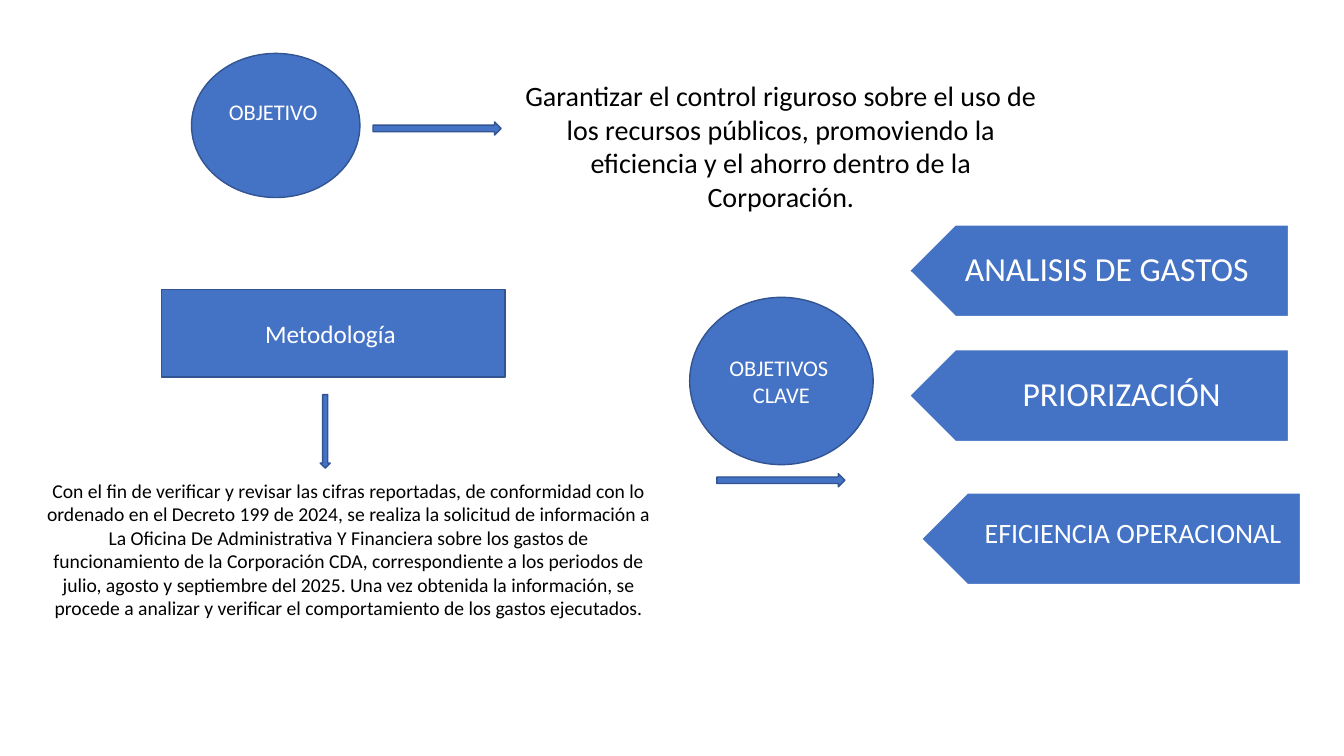
"""Build the slide on goals, method and key aims of spending control."""
import pptx
import pptx.dml.color
import pptx.enum.shapes
import pptx.enum.text
import pptx.util

Inches = pptx.util.Inches
Pt = pptx.util.Pt
Kind = pptx.enum.shapes.MSO_SHAPE
Anchor = pptx.enum.text.MSO_ANCHOR
Fit = pptx.enum.text.MSO_AUTO_SIZE
BLUE = pptx.dml.color.RGBColor(0x44, 0x72, 0xC4)
NAVY = pptx.dml.color.RGBColor(0x32, 0x54, 0x91)
WHITE = pptx.dml.color.RGBColor(0xFF, 0xFF, 0xFF)
BLACK = pptx.dml.color.RGBColor(0, 0, 0)

GOAL = "Garantizar el control riguroso sobre el uso de los recursos públicos, promoviendo la eficiencia y el ahorro dentro de la Corporación."
METHOD = (
    "Con el fin de verificar y revisar las cifras reportadas, de conformidad con lo ordenado en el "
    "Decreto 199 de 2024, se realiza la solicitud de información a La Oficina De Administrativa Y "
    "Financiera sobre los gastos de funcionamiento de la Corporación CDA, correspondiente a los "
    "periodos de julio, agosto y septiembre del 2025. Una vez obtenida la información, se procede "
    "a analizar y verificar el comportamiento de los gastos ejecutados."
)
NODES = [
    (Kind.OVAL, (1.9, 0.53, 1.67, 1.43), ["OBJETIVO "], 16, {"margin_bottom": Inches(0.32)}),
    (Kind.OVAL, (6.84, 2.95, 1.82, 1.66), ["OBJETIVOS ", "CLAVE"], 16, {}),
    (Kind.RECTANGLE, (1.6, 2.87, 3.41, 0.87), ["Metodología "], 18, {}),
]
ARROWS = [
    ((3.7, 1.21, 1.27, 0.13), 0),
    ((7.11, 4.7, 1.27, 0.13), 0),
    ((2.86, 4.23, 0.73, 0.1), 90),
]
NOTES = [
    ((5.01, 0.73, 5.47, 1.45), GOAL, 20),
    ((0.34, 4.7, 6.24, 1.51), METHOD, 14),
]
WIDE = {"margin_left": Inches(0.4), "margin_right": Inches(0.19),
        "margin_top": Inches(0.1), "margin_bottom": Inches(0.1)}
SLIM = {"margin_left": Inches(0.4), "margin_right": Inches(0.12),
        "margin_top": Inches(0.06), "margin_bottom": Inches(0.06)}
AIMS = [
    ("ANALISIS DE GASTOS ", 24, (9.02, 2.23), (9.14, 2.23), WIDE),
    ("PRIORIZACIÓN", 24, (9.02, 3.47), (9.25, 3.47), WIDE),
    ("EFICIENCIA OPERACIONAL ", 20, (9.14, 4.89), (9.36, 4.85), SLIM),
]
TAG = (3.76, 0.91)
LABEL = (3.54, 0.91)


def apply(item, form):
    for key, value in form.items():
        setattr(item, key, value)


def write(shape, lines, size, color, form, gap=None):
    frame = shape.text_frame
    apply(frame, {"word_wrap": True, "vertical_anchor": Anchor.MIDDLE, **form})
    frame.text = "\n".join(lines)
    for para in frame.paragraphs:
        apply(para, {"alignment": pptx.enum.text.PP_ALIGN.CENTER, "line_spacing": gap})
        for run in para.runs:
            apply(run.font, {"name": "Calibri", "size": Pt(size)})
            run.font.color.rgb = color


def draw(home, kind, box, edge=NAVY, turn=0):
    shape = home.add_shape(kind, *map(Inches, box))
    shape.fill.solid()
    shape.fill.fore_color.rgb = BLUE
    shape.line.color.rgb = edge
    shape.line.width = Pt(1)
    shape.shadow.inherit = False
    shape.rotation = turn
    return shape


def main():
    deck = pptx.Presentation()
    apply(deck, {"slide_width": Inches(13.33), "slide_height": Inches(7.5)})
    shapes = deck.slides.add_slide(deck.slide_layouts[6]).shapes

    for kind, box, lines, size, form in NODES:
        write(draw(shapes, kind, box), lines, size, WHITE, form)
    for box, turn in ARROWS:
        draw(shapes, Kind.RIGHT_ARROW, box, turn=turn)
    for box, text, size in NOTES:
        note = shapes.add_textbox(*map(Inches, box))
        form = {"vertical_anchor": Anchor.TOP, "auto_size": Fit.SHAPE_TO_FIT_TEXT}
        write(note, [text], size, BLACK, form)
    for text, size, spot, place, form in AIMS:
        group = shapes.add_group_shape().shapes
        draw(group, Kind.PENTAGON, spot + TAG, WHITE, 180)
        label = group.add_textbox(*map(Inches, place + LABEL))
        write(label, [text], size, WHITE, form, 0.9)

    deck.save("out.pptx")


if __name__ == "__main__":
    main()
